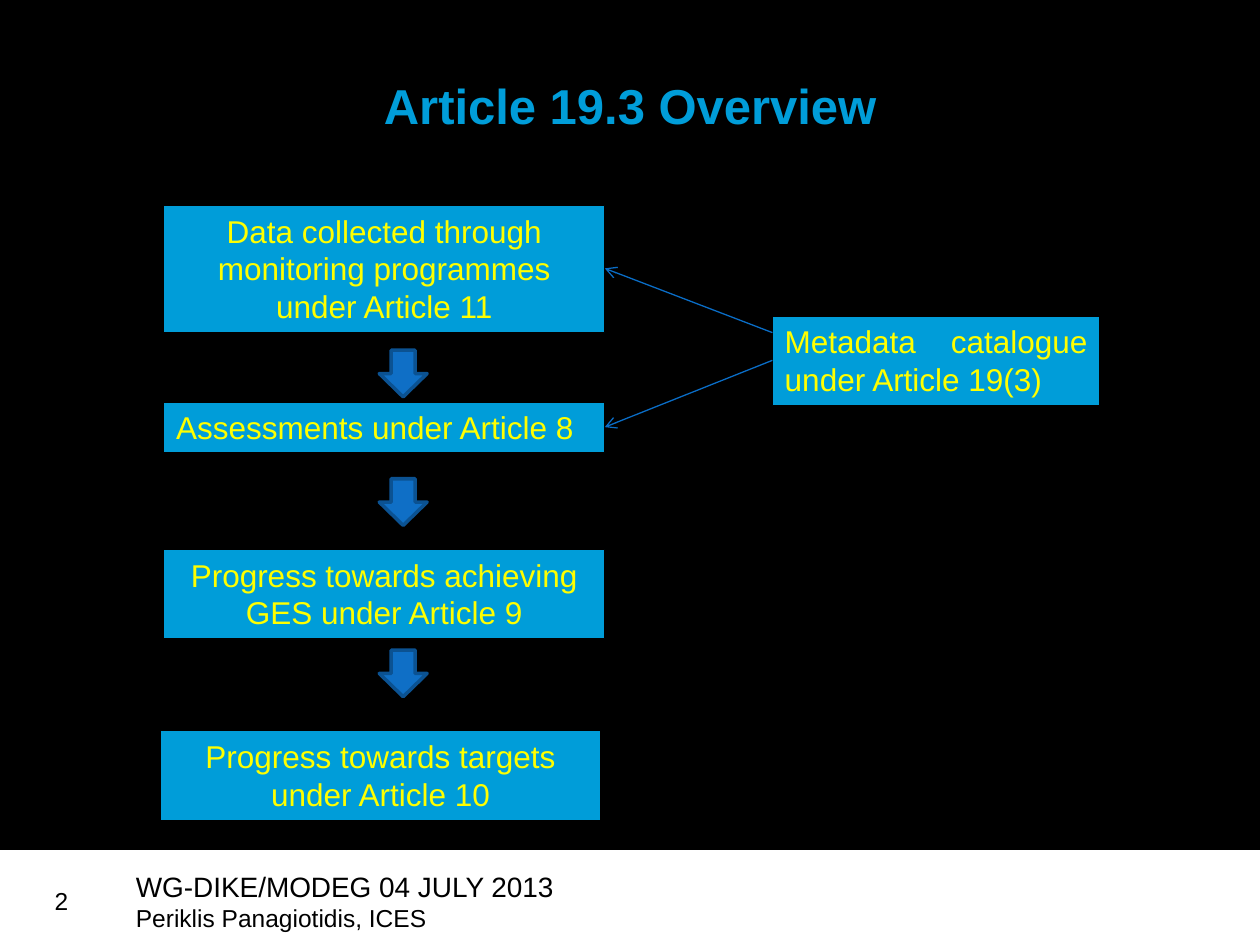
from lxml import etree
from pptx import Presentation
from pptx import util as u
from pptx.dml.color import RGBColor
from pptx.enum import shapes, text
from pptx.oxml.ns import qn

hues = {"black": "000000", "sky": "009DD9", "yellow": "FFFF00",
        "blue": "0F6FC6", "navy": "0B5292", "link": "0A6DC6"}
kinds = shapes.MSO_SHAPE
sides = text.PP_ALIGN

deck = Presentation()
deck.slide_width = u.Inches(10)
deck.slide_height = u.Inches(7.5)
col = deck.slide_width / 100
row = deck.slide_height / 75
slide = deck.slides.add_slide(deck.slide_layouts[5])
items = slide.shapes


def block(kind, x, y, w, h, fill, line, width):
    shape = items.add_shape(kind, int(x * col), int(y * row), int(w * col), int(h * row))
    shape.shadow.inherit = False
    shape.fill.solid()
    shape.fill.fore_color.rgb = RGBColor.from_string(hues[fill])
    shape.line.color.rgb = RGBColor.from_string(hues[line])
    shape.line.width = u.Pt(width)
    return shape


def write(para, words, size, hue, side, bold=False):
    para.alignment = side
    run = para.add_run()
    run.text = words
    run.font.name = "Arial"
    run.font.size = u.Pt(size)
    run.font.bold = bold
    run.font.color.rgb = RGBColor.from_string(hues[hue])


block(kinds.RECTANGLE, 0, 0, 100, 67.4, "black", "black", 0.75)

title = items.title
title.left, title.top = 0, int(2.8 * row)
title.width, title.height = deck.slide_width, int(11 * row)
title.text_frame.vertical_anchor = text.MSO_ANCHOR.MIDDLE
write(title.text_frame.paragraphs[0], "Article 19.3 Overview", 28, "sky", sides.CENTER, True)
items._spTree.append(title._element)

notes = [
    (1.2, 69.8, 5.2, 3.3, sides.RIGHT, [("2", 14)]),
    (9.8, 68.5, 59.1, 5.2, sides.LEFT,
     [("WG-DIKE/MODEG 04 JULY 2013", 16), ("Periklis Panagiotidis, ICES", 14)]),
]
for x, y, w, h, side, lines in notes:
    frame = items.add_textbox(int(x * col), int(y * row), int(w * col), int(h * row)).text_frame
    frame.word_wrap = True
    for i, (words, size) in enumerate(lines):
        para = frame.add_paragraph() if i else frame.paragraphs[0]
        write(para, words, size, "black", side)

steps = [
    (13, 16.3, 35, 10.1, sides.CENTER,
     "Data collected through monitoring programmes under Article 11"),
    (13, 31.9, 35, 4, sides.JUSTIFY, "Assessments under Article 8"),
    (13, 43.6, 35, 7.1, sides.CENTER, "Progress towards achieving GES under Article 9"),
    (12.7, 58, 35, 7.1, sides.CENTER, "Progress towards targets under Article 10"),
    (61.3, 25.1, 26, 7.1, sides.JUSTIFY, "Metadata catalogue under Article 19(3)"),
]
for x, y, w, h, side, words in steps:
    frame = block(kinds.RECTANGLE, x, y, w, h, "sky", "black", 0.75).text_frame
    frame.word_wrap = True
    frame.vertical_anchor = text.MSO_ANCHOR.TOP
    write(frame.paragraphs[0], words, 18, "yellow", side)

for y in (27.8, 38, 51.6):
    block(kinds.DOWN_ARROW, 30.1, y, 3.8, 3.7, "blue", "navy", 2)

for start, end in ((26.4, 21.3), (28.6, 33.9)):
    link = items.add_connector(shapes.MSO_CONNECTOR.STRAIGHT, int(61.3 * col),
                               int(start * row), int(48 * col), int(end * row))
    link.line.color.rgb = RGBColor.from_string(hues["link"])
    link.line.width = u.Pt(0.75)
    etree.SubElement(link.line._get_or_add_ln(), qn("a:tailEnd"), type="arrow")
    etree.SubElement(link._element.spPr, qn("a:effectLst"))

deck.save("out.pptx")
